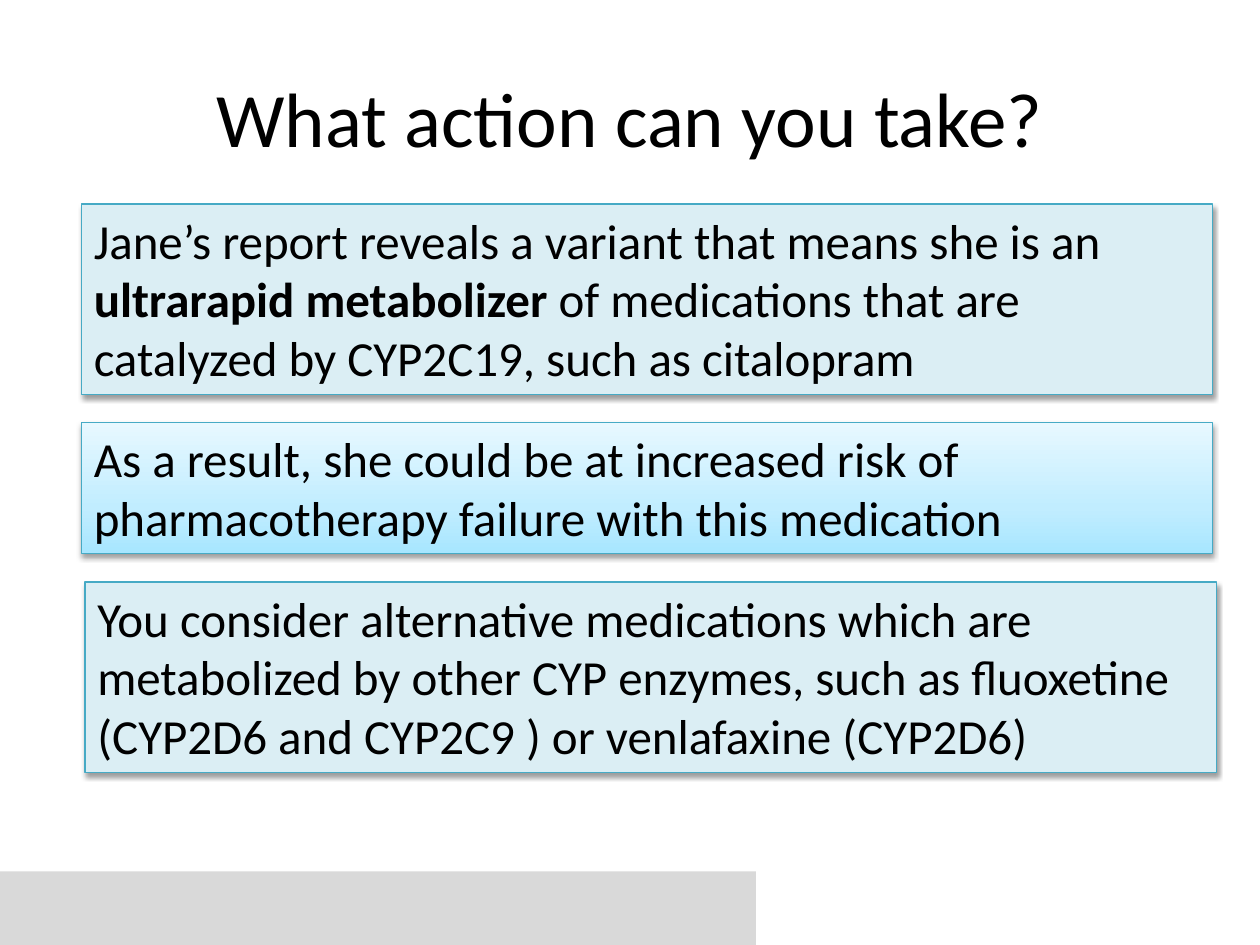
from lxml import etree
from pptx import Presentation
from pptx.dml.color import RGBColor
from pptx.enum.shapes import MSO_SHAPE
from pptx.enum.text import MSO_ANCHOR, MSO_AUTO_SIZE, PP_ALIGN
from pptx.oxml.ns import qn
from pptx.util import Pt

RECTANGLE = MSO_SHAPE.RECTANGLE
TOP, MIDDLE = MSO_ANCHOR.TOP, MSO_ANCHOR.MIDDLE
LEFT, CENTER = PP_ALIGN.LEFT, PP_ALIGN.CENTER
FIT_SHAPE, NO_FIT = MSO_AUTO_SIZE.SHAPE_TO_FIT_TEXT, MSO_AUTO_SIZE.NONE

COLORS = {
    "text": "000000",
    "footer": "D9D9D9",
    "panel": "DBEEF4",
    "border": "46AAC5",
    "shadow": "000000",
}
RISK_GRADIENT = [(0, "A7E6FF"), (35, "C1EDFF"), (100, "E7F8FF")]

TITLE = [("What action can you take?", False)]
FINDING = [
    ("Jane’s report reveals a variant that means she is an ", False),
    ("ultrarapid metabolizer ", True),
    ("of medications that are catalyzed by CYP2C19, such as citalopram", False),
]
RISK = [("As a result, she could be at increased risk of pharmacotherapy "
         "failure with this medication", False)]
ALTERNATIVES = [("You consider alternative medications which are metabolized by "
                 "other CYP enzymes, such as fluoxetine (CYP2D6 and CYP2C9 ) or "
                 "venlafaxine (CYP2D6)", False)]

PANELS = [
    (FINDING, 46.5, 109, None),
    (RISK, 46.5, 75, RISK_GRADIENT),
    (ALTERNATIVES, 48.5, 109, None),
]
PANEL_TOP, PANEL_WIDTH, PANEL_GAP = 116.5, 646.5, 16

TITLE_FRAME = {"word_wrap": True, "auto_size": NO_FIT, "vertical_anchor": MIDDLE}
PANEL_FRAME = {"word_wrap": True, "auto_size": FIT_SHAPE, "vertical_anchor": TOP}


def rgb(name):
    return RGBColor.from_string(COLORS[name])


def write(shape, runs, size, align, frame_format):
    frame = shape.text_frame
    for key, value in frame_format.items():
        setattr(frame, key, value)
    paragraph = frame.paragraphs[0]
    paragraph.alignment = align
    for text, bold in runs:
        run = paragraph.add_run()
        run.text = text
        for key, value in {"name": "Calibri", "size": Pt(size), "bold": bold}.items():
            setattr(run.font, key, value)
        run.font.color.rgb = rgb("text")


def add_color(parent, color):
    return etree.SubElement(parent, qn("a:srgbClr"), val=color)


def fill_gradient(shape, stops):
    shape.fill.gradient()
    shape.fill.gradient_angle = 90
    stop_list = shape._element.spPr.find(".//" + qn("a:gsLst"))
    for old_stop in list(stop_list):
        stop_list.remove(old_stop)
    for percent, color in stops:
        add_color(etree.SubElement(stop_list, qn("a:gs"), pos=str(percent * 1000)), color)


def cast_shadow(shape):
    shape.shadow.inherit = False
    effects = shape._element.spPr.find(qn("a:effectLst"))
    shadow = etree.SubElement(
        effects, qn("a:outerShdw"), blurRad=str(Pt(3.1)), dist=str(Pt(1.6)),
        dir="5400000", rotWithShape="0")
    etree.SubElement(add_color(shadow, COLORS["shadow"]), qn("a:alpha"), val="38000")


def add_panel(slide, runs, left, top, height, gradient):
    panel = slide.shapes.add_shape(
        RECTANGLE, Pt(left), Pt(top), Pt(PANEL_WIDTH), Pt(height))
    if gradient:
        fill_gradient(panel, gradient)
    else:
        panel.fill.solid()
        panel.fill.fore_color.rgb = rgb("panel")
    panel.line.color.rgb = rgb("border")
    panel.line.width = Pt(0.75)
    cast_shadow(panel)
    write(panel, runs, 28, LEFT, PANEL_FRAME)


def main():
    deck = Presentation()
    deck.slide_width, deck.slide_height = Pt(720), Pt(540)
    slide = deck.slides.add_slide(deck.slide_layouts[6])

    footer = slide.shapes.add_shape(RECTANGLE, Pt(0), Pt(498), Pt(432), Pt(42))
    footer.fill.solid()
    footer.fill.fore_color.rgb = rgb("footer")
    footer.line.fill.background()
    footer.shadow.inherit = False

    title = slide.shapes.add_textbox(Pt(36), Pt(21.6), Pt(648), Pt(90))
    write(title, TITLE, 44, CENTER, TITLE_FRAME)

    top = PANEL_TOP
    for runs, left, height, gradient in PANELS:
        add_panel(slide, runs, left, top, height, gradient)
        top += height + PANEL_GAP

    deck.save("out.pptx")


if __name__ == "__main__":
    main()
